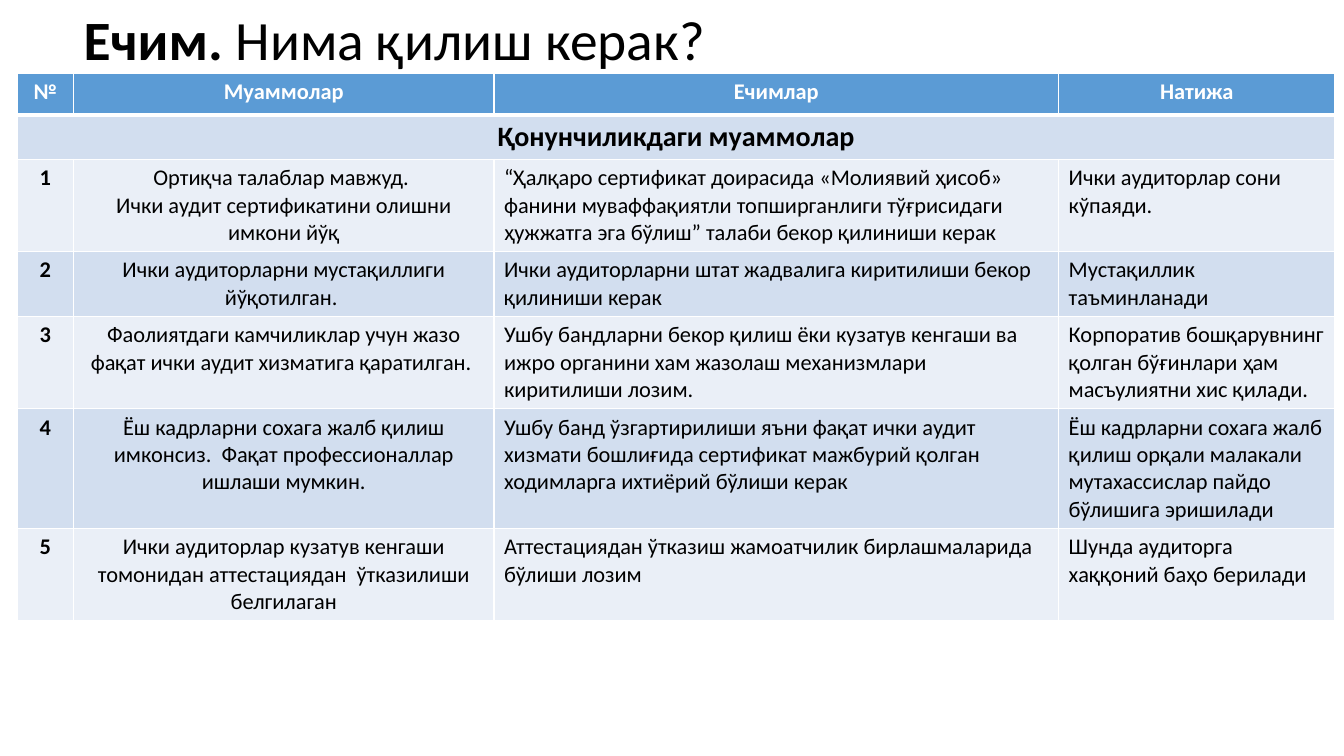
from dataclasses import dataclass
from lxml import etree
from pptx import Presentation
from pptx import util as u
from pptx.dml.color import RGBColor
from pptx.enum import text
from pptx.oxml import ns


@dataclass(frozen=True)
class Theme:
    font: str = "Calibri"
    black: str = "000000"
    white: str = "FFFFFF"
    head: str = "5B9BD5"
    dark: str = "D2DEEF"
    light: str = "EAEFF7"
    title: float = 39.6
    band: int = 20
    body: int = 16


theme = Theme()


def write(par, words, size, color, bold, align):
    par.alignment = align
    run = par.add_run()
    run.text = words
    font = run.font
    font.name, font.size, font.bold = theme.font, u.Pt(size), bold
    font.color.rgb = RGBColor.from_string(color)


def paint(cell, fill, edges):
    props = cell._tc.get_or_add_tcPr()
    for side, width in zip("LRTB", edges):
        line = etree.SubElement(props, ns.qn(f"a:ln{side}"), w=str(u.Pt(width)))
        solid = etree.SubElement(line, ns.qn("a:solidFill"))
        etree.SubElement(solid, ns.qn("a:srgbClr"), val=theme.white)
    cell.fill.solid()
    cell.fill.fore_color.rgb = RGBColor.from_string(fill)


left, center = text.PP_ALIGN.LEFT, text.PP_ALIGN.CENTER
heads = ["№", "Муаммолар", "Ечимлар", "Натижа"]
band = "Қонунчиликдаги муаммолар"
items = [
    ("Ортиқча талаблар мавжуд. \nИчки аудит сертификатини олишни имкони йўқ",
     "“Ҳалқаро сертификат доирасида «Молиявий ҳисоб» фанини муваффақиятли "
     "топширганлиги тўғрисидаги ҳужжатга эга бўлиш” талаби бекор қилиниши керак",
     "Ички аудиторлар сони кўпаяди."),
    ("Ички аудиторларни мустақиллиги йўқотилган. ",
     "Ички аудиторларни штат жадвалига киритилиши бекор қилиниши керак",
     "Мустақиллик таъминланади"),
    ("Фаолиятдаги камчиликлар учун жазо фақат ички аудит хизматига қаратилган. ",
     "Ушбу бандларни бекор қилиш ёки кузатув кенгаши ва ижро органини хам "
     "жазолаш механизмлари киритилиши лозим.",
     "Корпоратив бошқарувнинг қолган бўғинлари ҳам масъулиятни хис қилади."),
    ("Ёш кадрларни сохага жалб қилиш имконсиз.  Фақат профессионаллар ишлаши мумкин.",
     "Ушбу банд ўзгартирилиши яъни фақат ички аудит хизмати бошлиғида "
     "сертификат мажбурий қолган ходимларга ихтиёрий бўлиши керак",
     "Ёш кадрларни сохага жалб қилиш орқали малакали мутахассислар пайдо "
     "бўлишига эришилади"),
    ("Ички аудиторлар кузатув кенгаши томонидан аттестациядан  ўтказилиши белгилаган",
     "Аттестациядан ўтказиш жамоатчилик бирлашмаларида бўлиши лозим",
     "Шунда аудиторга хаққоний баҳо берилади"),
]

deck = Presentation()
deck.slide_width, deck.slide_height = u.Inches(13.33), u.Inches(7.5)
slide = deck.slides.add_slide(deck.slide_layouts[5])

title = slide.shapes.title
title.left, title.top = u.Inches(0.73), u.Inches(0.2)
title.width, title.height = u.Inches(9.75), u.Inches(0.44)
frame = title.text_frame
frame.word_wrap = True
frame.auto_size = text.MSO_AUTO_SIZE.NONE
frame.vertical_anchor = text.MSO_ANCHOR.MIDDLE
par = frame.paragraphs[0]
par.line_spacing = 0.9
for words, bold in [("Ечим. ", True), ("Нима қилиш керак?", False)]:
    write(par, words, theme.title, theme.black, bold, left)

rows = [heads, [band, "", "", ""]]
rows += [[str(num), *item] for num, item in enumerate(items, 1)]
grid = slide.shapes.add_table(len(rows), len(heads), u.Inches(0.17), u.Inches(0.73),
                              u.Inches(13.08), u.Inches(5.34))
table = grid.table
for col, width in zip(table.columns, [0.56, 4.17, 5.6, 2.74]):
    col.width = u.Inches(width)
for row in table.rows:
    row.height = u.Inches(0.41)
grid.height = u.Inches(5.34)
table.cell(1, 0).merge(table.cell(1, 3))

for r, row in enumerate(rows):
    fill = theme.head if r == 0 else theme.dark if r % 2 else theme.light
    edges = (1, 1, 3 if r == 1 else 1, 3 if r == 0 else 1)
    size = theme.band if r == 1 else theme.body
    color = theme.white if r == 0 else theme.black
    for c, words in enumerate(row):
        cell = table.cell(r, c)
        paint(cell, fill, edges)
        if not words:
            continue
        align = center if r < 2 or c < 2 else left
        for n, line in enumerate(words.split("\n")):
            frame = cell.text_frame
            par = frame.add_paragraph() if n else frame.paragraphs[0]
            write(par, line, size, color, r < 2 or c == 0, align)

deck.save("out.pptx")
